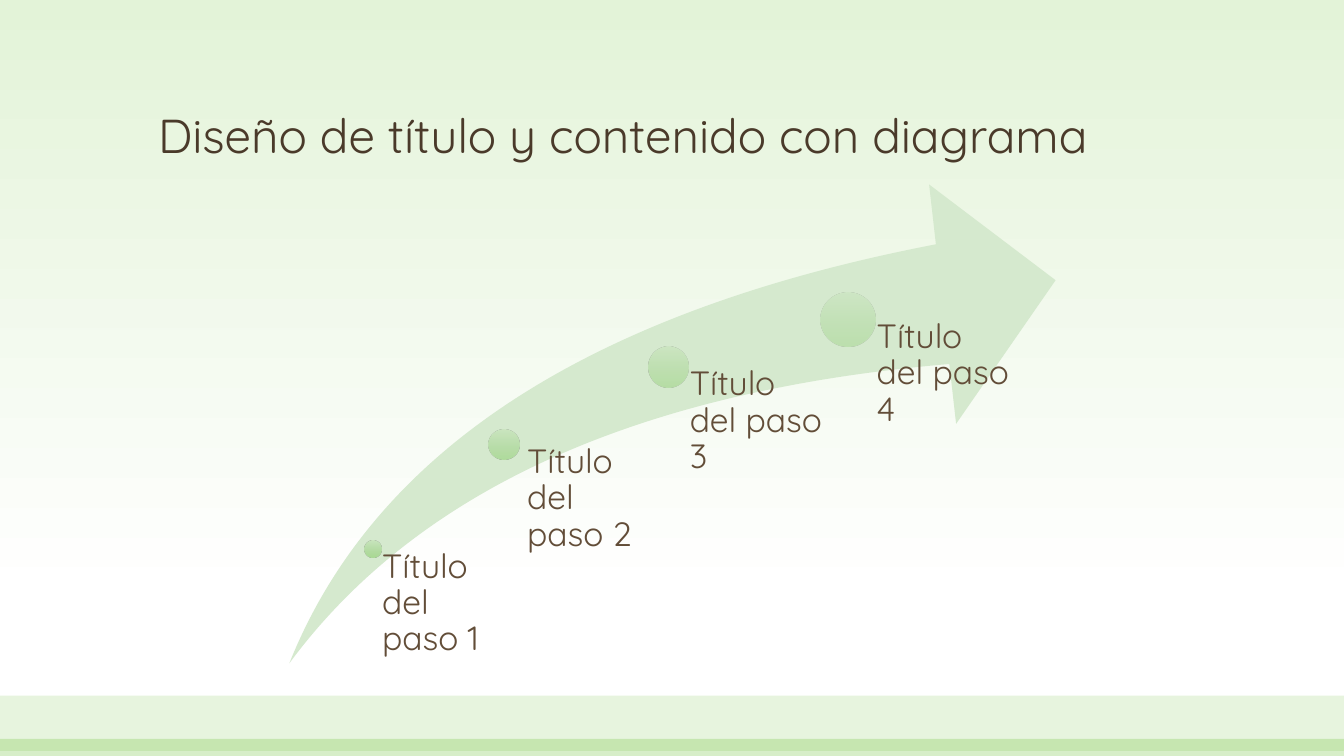
from copy import deepcopy
from dataclasses import dataclass

from pptx import Presentation
from pptx.dml.color import RGBColor
from pptx.enum.shapes import MSO_SHAPE
from pptx.enum.text import MSO_ANCHOR
from pptx.oxml.ns import qn
from pptx.util import Inches, Pt
from lxml import etree

RECTANGLE = MSO_SHAPE.RECTANGLE
OVAL = MSO_SHAPE.OVAL
SWOOSH = MSO_SHAPE.SWOOSH_ARROW
TOP = MSO_ANCHOR.TOP
BOTTOM = MSO_ANCHOR.BOTTOM


@dataclass(frozen=True)
class Theme:
    font: str = "Quicksand"
    title_size: int = 34
    label_size: int = 24
    title_color: str = "4A3A2A"
    label_color: str = "624D38"
    band: str = "72C23C"
    arrow: str = "D5E9CE"
    sky: tuple = ((0, "E3F3D8"), (79, "FFFFFF"))
    dot: tuple = ((0, "C8E5BC"), (50, "B3DBA2"), (100, "A4D78D"))


class SlideBuilder:
    def __init__(self, page, theme):
        self.page = page
        self.theme = theme

    @staticmethod
    def set_alpha(color_element, percent):
        alpha = etree.SubElement(color_element, qn("a:alpha"))
        alpha.set("val", str(percent * 1000))

    def vertical_gradient(self, fill, element, stops, opacity=100):
        """Fill from top to bottom with (percent, colour) stops."""
        fill.gradient()
        fill.gradient_angle = 270
        stop_list = element.find(".//" + qn("a:gsLst"))
        while len(stop_list) < len(stops):
            stop_list.append(deepcopy(stop_list[-1]))
        for stop, (percent, color) in zip(fill.gradient_stops, stops):
            stop.position = percent / 100
            stop.color.rgb = RGBColor.from_string(color)
        if opacity < 100:
            for color_element in stop_list.iter(qn("a:srgbClr")):
                self.set_alpha(color_element, opacity)

    def background(self):
        self.vertical_gradient(self.page.background.fill, self.page.element, self.theme.sky)

    def shape(self, kind, left, top, width, height):
        shape = self.page.shapes.add_shape(
            kind, Inches(left), Inches(top), Inches(width), Inches(height))
        shape.shadow.inherit = False
        shape.line.fill.background()
        return shape

    def solid(self, shape, color):
        shape.fill.solid()
        shape.fill.fore_color.rgb = RGBColor.from_string(color)

    def band(self, top, height, opacity):
        band = self.shape(RECTANGLE, 0, top, 13.33, height)
        self.solid(band, self.theme.band)
        self.set_alpha(band.element.spPr.find(".//" + qn("a:srgbClr")), opacity)

    def arrow(self, left, top, width, height):
        arrow = self.shape(SWOOSH, left, top, width, height)
        arrow.adjustments[0] = 0.25
        arrow.adjustments[1] = 0.25
        self.solid(arrow, self.theme.arrow)

    def dot(self, center_x, center_y, diameter, opacity):
        radius = diameter / 2
        dot = self.shape(OVAL, center_x - radius, center_y - radius, diameter, diameter)
        self.vertical_gradient(dot.fill, dot.element, self.theme.dot, opacity)

    def text(self, words, place, size, color, anchor=TOP, insets=(0.1, 0.05, 0.1, 0.05)):
        box = self.page.shapes.add_textbox(*map(Inches, place))
        frame = box.text_frame
        frame.word_wrap = True
        frame.vertical_anchor = anchor
        (frame.margin_left, frame.margin_top,
         frame.margin_right, frame.margin_bottom) = map(Inches, insets)
        para = frame.paragraphs[0]
        para.line_spacing = 0.9
        span = para.add_run()
        span.text = words
        span.font.name = self.theme.font
        span.font.size = Pt(size)
        span.font.color.rgb = RGBColor.from_string(color)

    def title(self, words):
        self.text(words, (1.47, 0.48, 10.4, 1.19), self.theme.title_size,
                  self.theme.title_color, BOTTOM)

    def label(self, words, left, top, width, bottom, inset):
        self.text(words, (left, top, width, bottom - top), self.theme.label_size,
                  self.theme.label_color, insets=(inset, 0, 0, 0))


# Dot centre x and y, diameter, opacity, label left, label width
STEPS = (
    (3.70, 5.45, 0.17, 90, 3.70, 1.30),
    (5.00, 4.41, 0.30, 77, 5.07, 1.46),
    (6.63, 3.64, 0.40, 63, 6.63, 1.60),
    (8.41, 3.17, 0.54, 50, 8.41, 1.60),
)
ARROW_TOP, ARROW_HEIGHT = 1.83, 4.75
INSET_PER_DIAMETER = 0.53


def main():
    deck = Presentation()
    deck.slide_width, deck.slide_height = Inches(13.33), Inches(7.5)
    builder = SlideBuilder(deck.slides.add_slide(deck.slide_layouts[6]), Theme())

    builder.background()
    builder.band(6.9, 0.55, 17)
    builder.band(7.33, 0.17, 28)
    builder.title("Diseño de título y contenido con diagrama")
    builder.arrow(2.87, ARROW_TOP, 7.6, ARROW_HEIGHT)
    for number, (x, y, diameter, opacity, left, width) in enumerate(STEPS, 1):
        builder.dot(x, y, diameter, opacity)
        builder.label(f"Título del paso {number}", left, y, width,
                      ARROW_TOP + ARROW_HEIGHT, diameter * INSET_PER_DIAMETER)

    deck.save("out.pptx")


if __name__ == "__main__":
    main()
